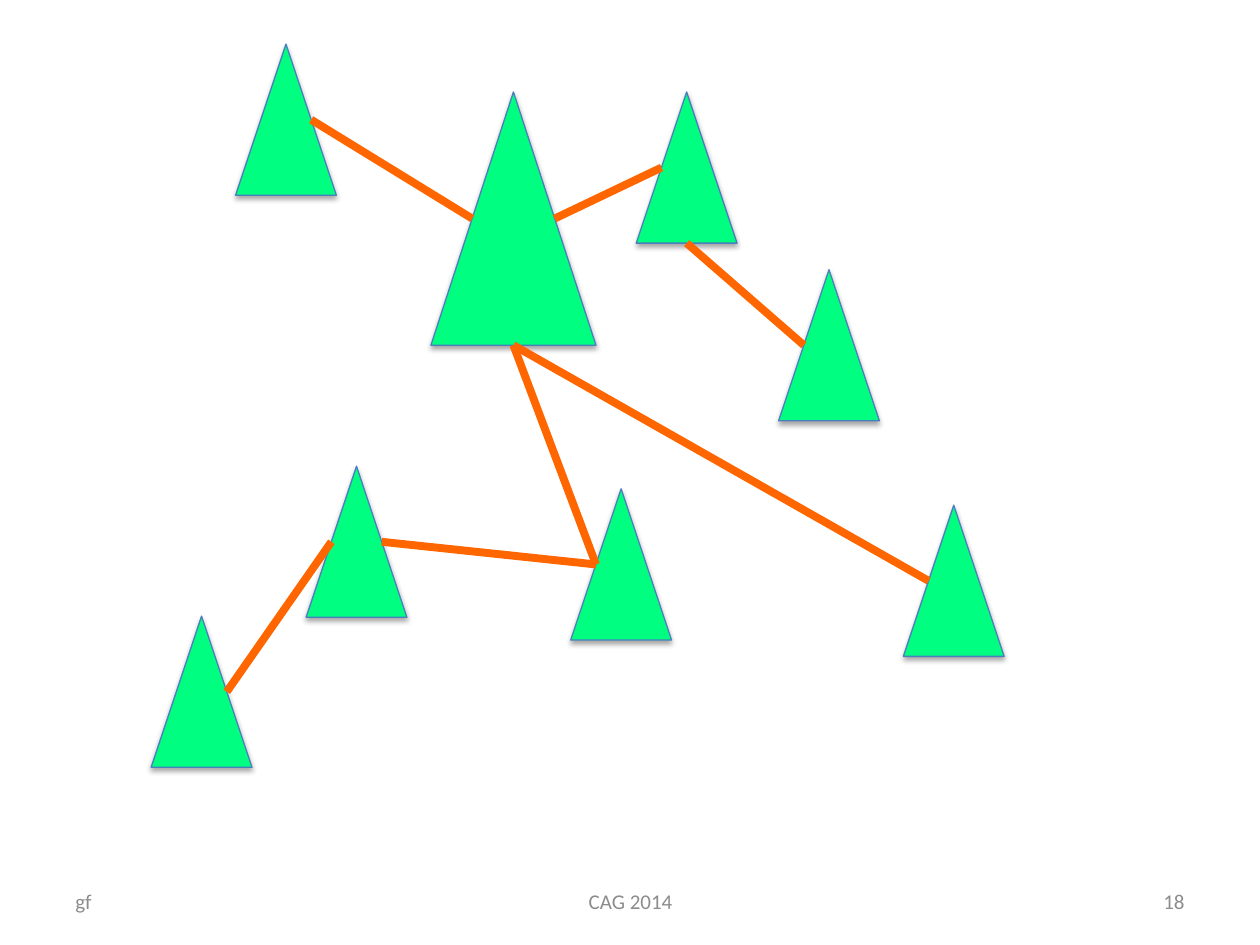
from lxml.etree import SubElement
from pptx import Presentation
from pptx.dml.color import RGBColor
from pptx.enum.shapes import MSO_CONNECTOR, MSO_SHAPE
from pptx.enum.text import MSO_ANCHOR, PP_ALIGN
from pptx.oxml.ns import qn
from pptx.util import Pt

PX = 9144
COLORS = {"tree": "00FF80", "outline": "4B7EBC", "link": "FF6600",
          "footer": "8C8C8C", "shadow": "000000"}
SMALL = (80, 120)
TREES = {
    "hub": (342, 73, 131, 201),
    "east": (618, 214, *SMALL),
    "far_east": (717, 401, *SMALL),
    "south": (453, 388, *SMALL),
    "south_west": (243, 370, *SMALL),
    "far_west": (120, 489, *SMALL),
    "north_west": (187, 35, *SMALL),
    "north_east": (505, 73, *SMALL),
}
SITES = {"left": (0.25, 0.5), "right": (0.75, 0.5), "bottom": (0.5, 1)}
LINKS = [
    ("far_west", "right", "south_west", "left"),
    ("hub", "right", "north_east", "left"),
    ("north_west", "right", "hub", "left"),
    ("hub", "bottom", "south", "left"),
    ("south", "left", "south_west", "right"),
    ("north_east", "bottom", "east", "left"),
    ("hub", "bottom", "far_east", "left"),
]
FOOTERS = [
    ("gf", 50, 233, PP_ALIGN.LEFT),
    ("CAG 2014", 342, 317, PP_ALIGN.CENTER),
    ("18", 717, 233, PP_ALIGN.RIGHT),
]


def color(name):
    return RGBColor.from_string(COLORS[name])


def emu(*lengths):
    return [round(length * PX) for length in lengths]


def add_footer(page, text, left, width, alignment):
    box = page.shapes.add_textbox(*emu(left, 695, width, 40))
    frame = box.text_frame
    frame.word_wrap = True
    frame.vertical_anchor = MSO_ANCHOR.MIDDLE
    para = frame.paragraphs[0]
    para.text = text
    para.alignment = alignment
    para.font.name = "Calibri"
    para.font.size = Pt(12)
    para.font.color.rgb = color("footer")


def add_shadow(shape):
    shape.shadow.inherit = False
    effects = shape._element.spPr.find(qn("a:effectLst"))
    shadow = SubElement(effects, qn("a:outerShdw"), blurRad="40000",
                        dist="23000", dir="5400000", rotWithShape="0")
    tint = SubElement(shadow, qn("a:srgbClr"), val=COLORS["shadow"])
    SubElement(tint, qn("a:alpha"), val="35000")


def add_tree(page, bounds):
    tree = page.shapes.add_shape(MSO_SHAPE.ISOSCELES_TRIANGLE, *emu(*bounds))
    tree.fill.solid()
    tree.fill.fore_color.rgb = color("tree")
    tree.line.color.rgb = color("outline")
    tree.line.width = Pt(0.75)
    add_shadow(tree)


def site_point(name, site):
    left, top, width, height = TREES[name]
    across, down = SITES[site]
    return emu(left + width * across, top + height * down)


def add_link(page, start, start_site, end, end_site):
    link = page.shapes.add_connector(
        MSO_CONNECTOR.STRAIGHT,
        *site_point(start, start_site), *site_point(end, end_site))
    link.line.color.rgb = color("link")
    link.line.width = Pt(4.5)
    SubElement(link._element.spPr, qn("a:effectLst"))


def main():
    deck = Presentation()
    deck.slide_width, deck.slide_height = emu(1000, 750)
    page = deck.slides.add_slide(deck.slide_layouts[6])
    for footer in FOOTERS:
        add_footer(page, *footer)
    for bounds in TREES.values():
        add_tree(page, bounds)
    for link in LINKS:
        add_link(page, *link)
    deck.save("out.pptx")


if __name__ == "__main__":
    main()
